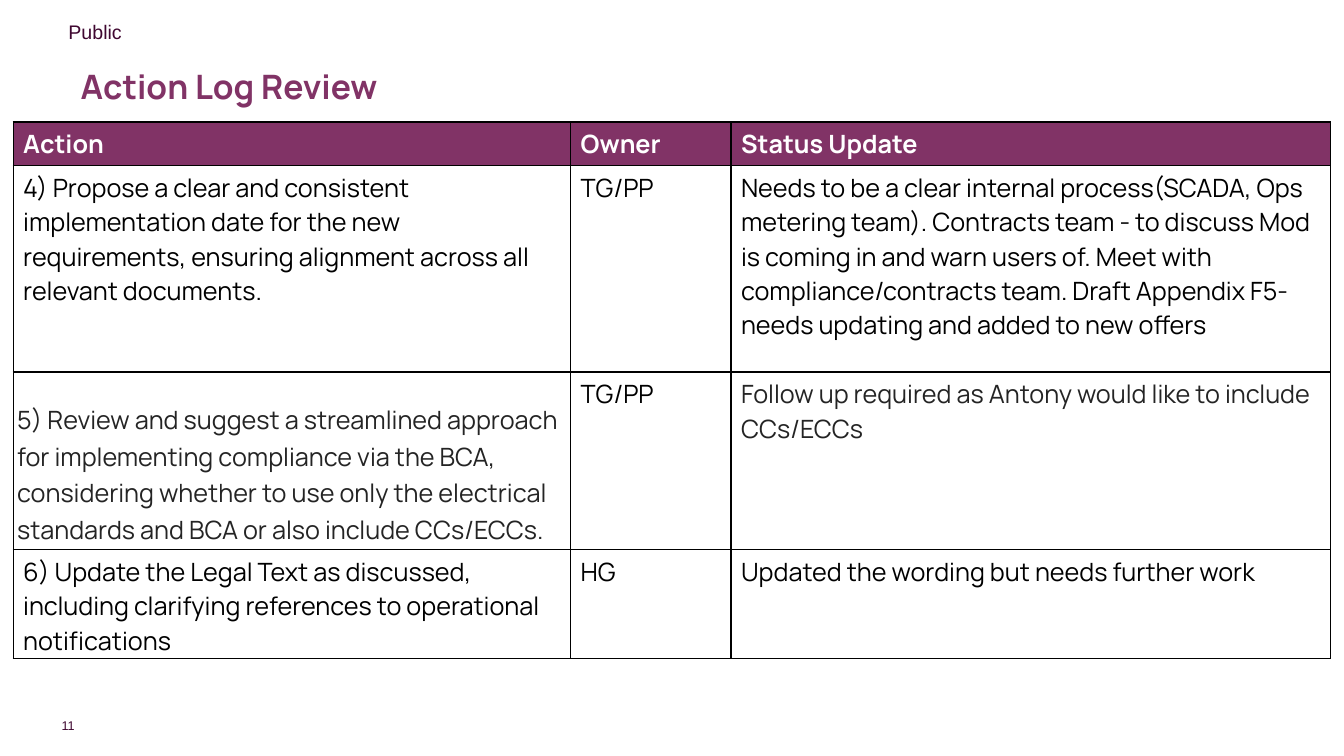
"""Build the action log review slide."""
from dataclasses import dataclass

from lxml import etree
from pptx import Presentation
from pptx.dml.color import RGBColor
from pptx.enum.text import MSO_ANCHOR, MSO_AUTO_SIZE, PP_ALIGN
from pptx.oxml.ns import qn
from pptx.util import Emu, Pt

EMU_PER_PX = 9144
LEFT, RIGHT = PP_ALIGN.LEFT, PP_ALIGN.RIGHT
TOP, MIDDLE, BOTTOM = MSO_ANCHOR.TOP, MSO_ANCHOR.MIDDLE, MSO_ANCHOR.BOTTOM
NO_AUTO_SIZE = MSO_AUTO_SIZE.NONE

PLUM = RGBColor(0x81, 0x33, 0x66)
DARK_PLUM = RGBColor(0x3F, 0x07, 0x30)
WHITE = RGBColor(0xFF, 0xFF, 0xFF)
BLACK = RGBColor(0x00, 0x00, 0x00)
CHARCOAL = RGBColor(0x24, 0x24, 0x24)

BODY_FONT = "Manrope"
LABEL_FONT = "Arial"
COLUMN_WIDTHS = (553, 159, 595)
ROW_HEIGHTS = (43, 205, 176, 108)


@dataclass(frozen=True)
class Style:
    size: float
    color: RGBColor
    font: str = BODY_FONT
    bold: bool = False


@dataclass(frozen=True)
class Label:
    text: str
    left: int
    top: int
    width: int
    height: int
    style: Style
    inset_x: int
    inset_y: int
    align: PP_ALIGN = LEFT
    anchor: MSO_ANCHOR = TOP
    wrap: bool = True


@dataclass(frozen=True)
class CellText:
    text: str
    style: Style
    inset_x: int = 10
    inset_y: int = 5
    anchor: MSO_ANCHOR = TOP
    line_spacing: float = 1.0
    space_after: int = 0


TITLE = Style(24, PLUM, bold=True)
HEADER = Style(18, WHITE, bold=True)
BODY = Style(18, BLACK)
SOFT_BODY = Style(18, CHARCOAL)

LABELS = (
    Label("11", 59, 712, 15, 15, Style(9, DARK_PLUM, LABEL_FONT), 0, 0, RIGHT, MIDDLE, False),
    Label("Public", 58, 15, 500, 34, Style(14, DARK_PLUM, LABEL_FONT), 10, 5),
)

ROWS = (
    tuple(CellText(heading, HEADER) for heading in ("Action", "Owner", "Status Update")),
    (
        CellText("4) Propose a clear and consistent implementation date for the new "
                 "requirements, ensuring alignment across all relevant documents.", BODY),
        CellText("TG/PP", BODY),
        CellText("Needs to be a clear internal process(SCADA, Ops metering team). "
                 "Contracts team - to discuss Mod is coming in and warn users of. "
                 "Meet with compliance/contracts team. Draft Appendix F5- needs "
                 "updating and added to new offers", BODY),
    ),
    (
        CellText("5) Review and suggest a streamlined approach for implementing "
                 "compliance via the BCA, considering whether to use only the "
                 "electrical standards and BCA or also include CCs/ECCs.",
                 SOFT_BODY, 4, 2, BOTTOM, 1.07, 8),
        CellText("TG/PP", BODY),
        CellText("Follow up required as Antony would like to include CCs/ECCs", SOFT_BODY),
    ),
    (
        CellText("6) Update the Legal Text as discussed, including clarifying "
                 "references to operational notifications", BODY),
        CellText("HG", BODY),
        CellText("Updated the wording but needs further work", BODY),
    ),
)


def px(length: int) -> Emu:
    """Convert whole pixels to EMU."""
    return Emu(length * EMU_PER_PX)


def add_run(paragraph, text: str, style: Style) -> None:
    """Add one formatted run to a paragraph."""
    run = paragraph.add_run()
    run.text = text
    run.font.name = style.font
    run.font.size = Pt(style.size)
    run.font.bold = style.bold
    run.font.color.rgb = style.color


def set_margins(target, inset_x: int, inset_y: int) -> None:
    """Set the insets of a text frame or table cell."""
    target.margin_left = target.margin_right = px(inset_x)
    target.margin_top = target.margin_bottom = px(inset_y)


def format_title(slide) -> None:
    """Place and fill the title placeholder."""
    title = slide.shapes.title
    title.left, title.top, title.width, title.height = map(px, (70, 40, 1062, 95))
    frame = title.text_frame
    frame.auto_size = NO_AUTO_SIZE
    frame.vertical_anchor = MIDDLE
    paragraph = frame.paragraphs[0]
    paragraph.alignment = LEFT
    paragraph.line_spacing = 0.9
    add_run(paragraph, "Action Log Review", TITLE)


def add_label(slide, label: Label) -> None:
    """Add a text box for a label."""
    box = slide.shapes.add_textbox(*map(px, (label.left, label.top, label.width, label.height)))
    frame = box.text_frame
    frame.word_wrap = label.wrap
    frame.vertical_anchor = label.anchor
    set_margins(frame, label.inset_x, label.inset_y)
    paragraph = frame.paragraphs[0]
    paragraph.alignment = label.align
    add_run(paragraph, label.text, label.style)


def add_borders(cell) -> None:
    """Draw a thin black line on every side of a cell."""
    properties = cell._tc.get_or_add_tcPr()
    for side in ("a:lnL", "a:lnR", "a:lnT", "a:lnB"):
        line = etree.SubElement(properties, qn(side), w=str(Pt(1)))
        fill = etree.SubElement(line, qn("a:solidFill"))
        etree.SubElement(fill, qn("a:srgbClr"), val=str(BLACK))


def fill_cell(cell, content: CellText, is_header: bool) -> None:
    """Write and format one table cell."""
    set_margins(cell, content.inset_x, content.inset_y)
    cell.vertical_anchor = content.anchor
    add_borders(cell)
    if is_header:
        cell.fill.solid()
        cell.fill.fore_color.rgb = PLUM
    else:
        cell.fill.background()
    paragraph = cell.text_frame.paragraphs[0]
    paragraph.line_spacing = content.line_spacing
    paragraph.space_after = Pt(content.space_after)
    add_run(paragraph, content.text, content.style)


def add_action_table(slide) -> None:
    """Add the action log table."""
    frame = slide.shapes.add_table(
        len(ROWS), len(COLUMN_WIDTHS), px(13), px(121),
        px(sum(COLUMN_WIDTHS)), px(sum(ROW_HEIGHTS)))
    table = frame.table
    table.horz_banding = False
    for column, width in zip(table.columns, COLUMN_WIDTHS):
        column.width = px(width)
    for index, (row, height, contents) in enumerate(zip(table.rows, ROW_HEIGHTS, ROWS)):
        row.height = px(height)
        for cell, content in zip(row.cells, contents):
            fill_cell(cell, content, index == 0)


def main() -> None:
    """Build and save the presentation."""
    presentation = Presentation()
    presentation.slide_width, presentation.slide_height = px(1333), px(750)
    slide = presentation.slides.add_slide(presentation.slide_layouts.get_by_name("Title Only"))
    format_title(slide)
    for label in LABELS:
        add_label(slide, label)
    add_action_table(slide)
    presentation.save("out.pptx")


if __name__ == "__main__":
    main()
